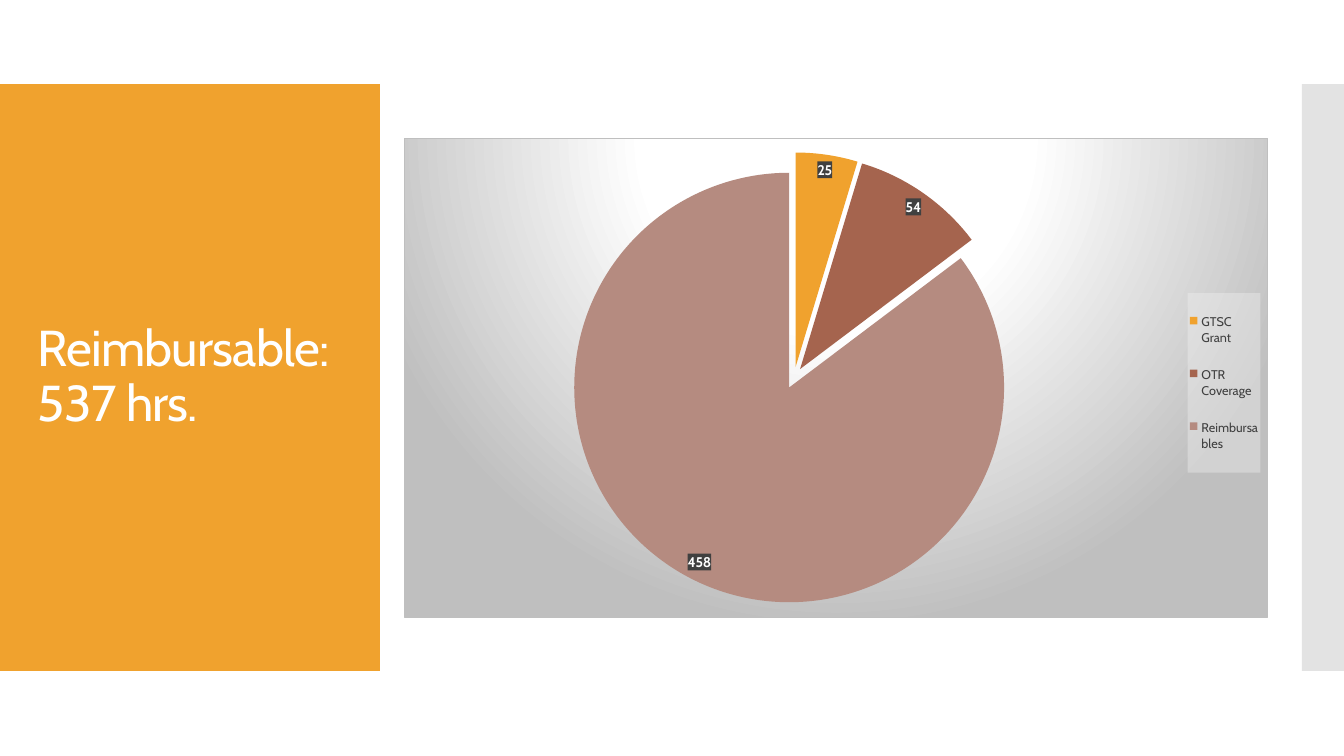
from lxml import etree
from pptx import Presentation
from pptx.chart.data import CategoryChartData
from pptx.dml.color import RGBColor
from pptx.enum.chart import XL_CHART_TYPE, XL_LABEL_POSITION, XL_LEGEND_POSITION
from pptx.enum.shapes import MSO_SHAPE
from pptx.enum.text import MSO_ANCHOR, PP_ALIGN
from pptx.oxml import parse_xml
from pptx.oxml.ns import qn
from pptx.util import Pt

PIE = XL_CHART_TYPE.PIE
BEST_FIT = XL_LABEL_POSITION.BEST_FIT
RIGHT = XL_LEGEND_POSITION.RIGHT
RECTANGLE = MSO_SHAPE.RECTANGLE
MIDDLE = MSO_ANCHOR.MIDDLE
LEFT = PP_ALIGN.LEFT

PX = 914400 / 100.8
FONT = "Cabin"
COLORS = {
    "white": "FFFFFF", "black": "000000", "dark": "404040",
    "legend": "F2F2F2", "edge": "BFBFBF", "strip": "C8C8C8",
    "orange": "F0A22E", "rust": "A5644E", "rose": "B58B80",
}
NAMESPACES = (
    'xmlns:c="http://schemas.openxmlformats.org/drawingml/2006/chart" '
    'xmlns:a="http://schemas.openxmlformats.org/drawingml/2006/main"'
)
CHART_BOX = (404, 138, 864, 480)


def emu(*lengths):
    return [round(length * PX) for length in lengths]


def layout_xml(box, target=""):
    """Manual chart layout for a box given in slide px."""
    left, top, width, height = CHART_BOX
    fractions = {
        "x": (box[0] - left) / width, "y": (box[1] - top) / height,
        "w": box[2] / width, "h": box[3] / height,
    }
    modes = '<c:xMode val="edge"/><c:yMode val="edge"/>'
    values = "".join(f'<c:{key} val="{value:.4f}"/>' for key, value in fractions.items())
    return parse_xml(f"<c:layout {NAMESPACES}><c:manualLayout>{target}{modes}{values}"
                     "</c:manualLayout></c:layout>")


presentation = Presentation()
presentation.slide_width, presentation.slide_height = emu(1344, 756)
slide = presentation.slides.add_slide(presentation.slide_layouts[6])

# Side panels: orange title panel and translucent grey strip
for box, color, opacity in (
    ((0, 84, 380, 587), "orange", 100),
    ((1302, 84, 42, 587), "strip", 50),
):
    panel = slide.shapes.add_shape(RECTANGLE, *emu(*box))
    panel.shadow.inherit = False
    panel.line.fill.background()
    panel.fill.solid()
    panel.fill.fore_color.rgb = RGBColor.from_string(COLORS[color])
    if opacity < 100:
        tint = panel.fill._xPr.find(".//" + qn("a:srgbClr"))
        etree.SubElement(tint, qn("a:alpha"), val=str(opacity * 1000))

# Title
title = slide.shapes.add_textbox(*emu(28, 124, 325, 507)).text_frame
title.word_wrap = True
title.vertical_anchor = MIDDLE
heading = title.paragraphs[0]
heading.alignment = LEFT
heading.line_spacing = 0.9
run = heading.add_run()
run.text = "Reimbursable: 537 hrs."
run.font.name = FONT
run.font.size = Pt(36)
run.font.color.rgb = RGBColor.from_string(COLORS["white"])
run.font._element.set("spc", "-60")

# Pie of reimbursable hours
hours = CategoryChartData()
hours.categories = ["GTSC Grant", "OTR Coverage", "Reimbursables"]
hours.add_series("Series 1", (25, 54, 458))
chart = slide.shapes.add_chart(PIE, *emu(*CHART_BOX), hours).chart
chart.has_title = False
chart.font.name = FONT
chart.font.size = Pt(10)
chart.font.color.rgb = RGBColor.from_string(COLORS["black"])

# Slices, pulled apart
pie = chart.plots[0]
pie.vary_by_categories = True
series = pie.series[0]
series._element.find(qn("c:tx")).addnext(
    parse_xml(f'<c:explosion {NAMESPACES} val="5"/>'))
for index, color in enumerate(("orange", "rust", "rose")):
    slice_format = series.points[index].format
    slice_format.fill.solid()
    slice_format.fill.fore_color.rgb = RGBColor.from_string(COLORS[color])
    slice_format.line.fill.background()

# Value labels
labels = series.data_labels
labels.show_value = True
labels.position = BEST_FIT
labels.font.name = FONT
labels.font.size = Pt(10)
labels.font.bold = True
labels.font.color.rgb = RGBColor.from_string(COLORS["white"])
labels._element.find(qn("c:txPr")).addprevious(parse_xml(
    f'<c:spPr {NAMESPACES}><a:solidFill><a:srgbClr val="{COLORS["dark"]}">'
    '<a:alpha val="90000"/></a:srgbClr></a:solidFill></c:spPr>'))

# Legend
chart.has_legend = True
legend = chart.legend
legend.position = RIGHT
legend.include_in_layout = False
legend.font.name = FONT
legend.font.size = Pt(9)
legend.font.color.rgb = RGBColor.from_string(COLORS["dark"])
for old_layout in legend._element.findall(qn("c:layout")):
    legend._element.remove(old_layout)
legend._element.find(qn("c:legendPos")).addnext(layout_xml((1188, 293, 73, 180)))
legend._element.find(qn("c:txPr")).addprevious(parse_xml(
    f'<c:spPr {NAMESPACES}><a:solidFill><a:srgbClr val="{COLORS["legend"]}">'
    '<a:alpha val="39000"/></a:srgbClr></a:solidFill></c:spPr>'))

# Plot position
plot_area = chart._chartSpace.find(".//" + qn("c:plotArea"))
for old_layout in plot_area.findall(qn("c:layout")):
    plot_area.remove(old_layout)
plot_area.insert(0, layout_xml((568, 152, 452, 452), '<c:layoutTarget val="inner"/>'))

# Radial background and border
stops = "".join(
    f'<a:gs pos="{position * 1000}"><a:srgbClr val="{COLORS[color]}"/></a:gs>'
    for position, color in ((0, "white"), (39, "white"), (100, "edge")))
chart._chartSpace.find(qn("c:chart")).addnext(parse_xml(
    f'<c:spPr {NAMESPACES}><a:gradFill><a:gsLst>{stops}</a:gsLst><a:path path="circle">'
    '<a:fillToRect l="50000" t="-80000" r="50000" b="180000"/></a:path></a:gradFill>'
    f'<a:ln w="{Pt(0.75)}"><a:solidFill><a:srgbClr val="{COLORS["edge"]}"/></a:solidFill>'
    "</a:ln></c:spPr>"))

presentation.save("out.pptx")
